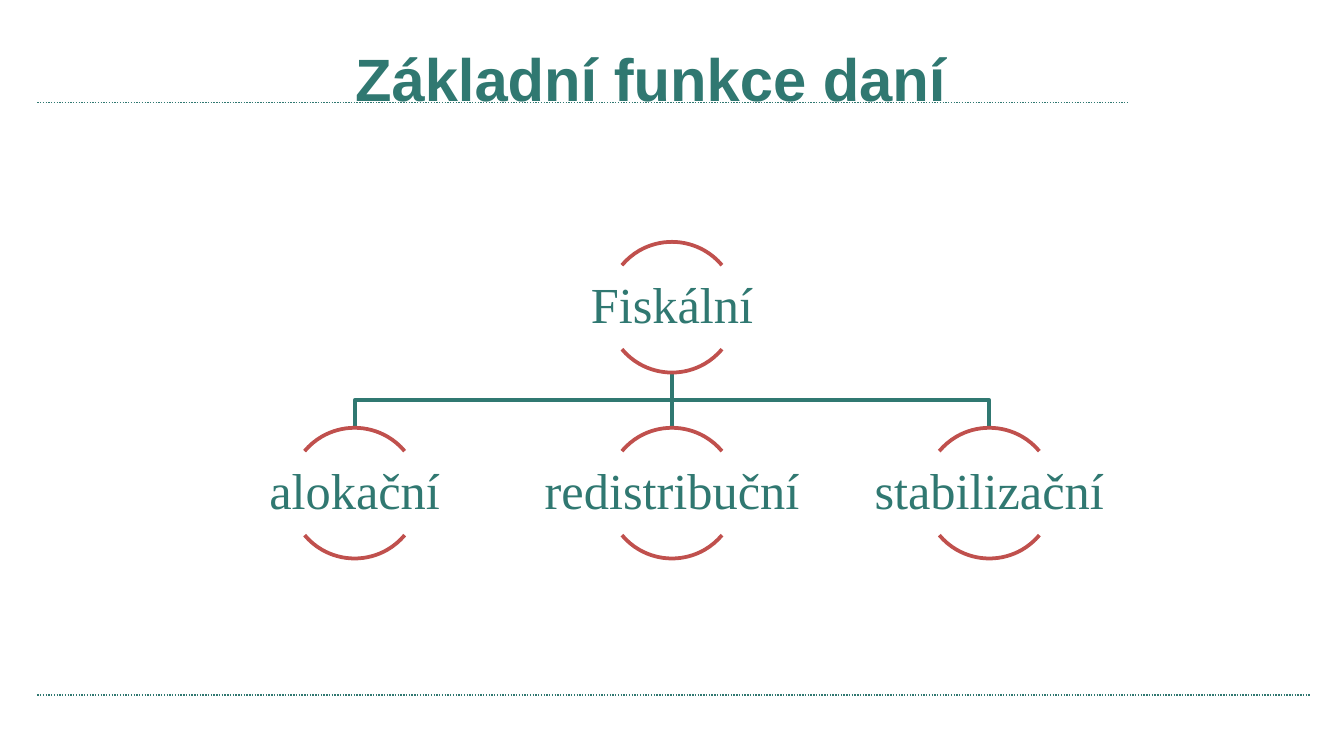
from lxml.etree import SubElement
from pptx import Presentation
from pptx.dml.color import RGBColor
from pptx.enum.dml import MSO_LINE
from pptx.enum.shapes import MSO_CONNECTOR, MSO_SHAPE
from pptx.enum.text import MSO_ANCHOR, PP_ALIGN
from pptx.oxml.ns import qn
from pptx.util import Pt

TEAL = "307871"
RED = "C0504D"

CENTER_X = 360
BRANCH_GAP = 170
DIAMETER = 70
ROOT_TOP = 129.6
BRANCH_TOP = 229.2
ROOT_BOTTOM = ROOT_TOP + DIAMETER
LABEL_WIDTH, LABEL_HEIGHT = 140.4, 44.6
BRANCHES = ["alokační", "redistribuční", "stabilizační"]


def color(hex_value):
    return RGBColor.from_string(hex_value)


def set_line(shape, hex_value, width):
    shape.line.color.rgb = color(hex_value)
    shape.line.width = Pt(width)


def add_line(slide, x1, y1, x2, y2, width, dash=None):
    line = slide.shapes.add_connector(
        MSO_CONNECTOR.STRAIGHT, Pt(x1), Pt(y1), Pt(x2), Pt(y2))
    set_line(line, TEAL, width)
    if dash is not None:
        line.line.dash_style = dash
    SubElement(line._element.spPr, qn("a:effectLst"))


def add_elbow(slide, end_x):
    """Draw the bent line from the root circle to a branch circle."""
    middle_y = (ROOT_BOTTOM + BRANCH_TOP) / 2
    points = [(CENTER_X, middle_y), (end_x, middle_y), (end_x, BRANCH_TOP)]
    builder = slide.shapes.build_freeform(Pt(CENTER_X), Pt(ROOT_BOTTOM))
    builder.add_line_segments([(Pt(x), Pt(y)) for x, y in points], close=False)
    elbow = builder.convert_to_shape()
    elbow.shadow.inherit = False
    elbow.fill.background()
    set_line(elbow, TEAL, 2)


def add_text(slide, text, left, top, width, height, font, size,
             bold=False, anchor=MSO_ANCHOR.MIDDLE, inset=1.4, inset_top=1.4):
    box = slide.shapes.add_textbox(Pt(left), Pt(top), Pt(width), Pt(height))
    frame = box.text_frame
    frame.word_wrap = True
    frame.vertical_anchor = anchor
    frame.margin_left = frame.margin_right = frame.margin_bottom = Pt(inset)
    frame.margin_top = Pt(inset_top)
    paragraph = frame.paragraphs[0]
    paragraph.text = text
    paragraph.alignment = PP_ALIGN.CENTER
    paragraph.font.name = font
    paragraph.font.size = Pt(size)
    paragraph.font.bold = bold
    paragraph.font.color.rgb = color(TEAL)
    return paragraph


def add_node(slide, text, center_x, top):
    """Draw a label between an upper and a lower arc of one circle."""
    for start, end in [(132, 192), (24, 84)]:
        arc = slide.shapes.add_shape(
            MSO_SHAPE.ARC, Pt(center_x - DIAMETER / 2), Pt(top),
            Pt(DIAMETER), Pt(DIAMETER))
        arc.adjustments[0] = start
        arc.adjustments[1] = end
        arc.shadow.inherit = False
        arc.fill.background()
        set_line(arc, RED, 2)
    paragraph = add_text(
        slide, text, center_x - LABEL_WIDTH / 2,
        top + (DIAMETER - LABEL_HEIGHT) / 2,
        LABEL_WIDTH, LABEL_HEIGHT, "Times New Roman", 27)
    paragraph.line_spacing = 0.9


def main():
    presentation = Presentation()
    presentation.slide_width = Pt(720)
    presentation.slide_height = Pt(405)
    slide = presentation.slides.add_slide(presentation.slide_layouts[6])

    for y, right in [(55, 604), (372.4, 702)]:
        add_line(slide, 20, y, right, y, 0.75, MSO_LINE.ROUND_DOT)
    add_text(slide, "Základní funkce daní", 20, 15, 657.4, 40.3, "Arial", 32,
             bold=True, anchor=MSO_ANCHOR.TOP, inset=0, inset_top=7.4)

    add_elbow(slide, CENTER_X + BRANCH_GAP)
    add_line(slide, CENTER_X, ROOT_BOTTOM, CENTER_X, BRANCH_TOP, 2)
    add_elbow(slide, CENTER_X - BRANCH_GAP)

    add_node(slide, "Fiskální", CENTER_X, ROOT_TOP)
    for position, text in enumerate(BRANCHES, start=-1):
        add_node(slide, text, CENTER_X + position * BRANCH_GAP, BRANCH_TOP)

    presentation.save("out.pptx")


if __name__ == "__main__":
    main()
